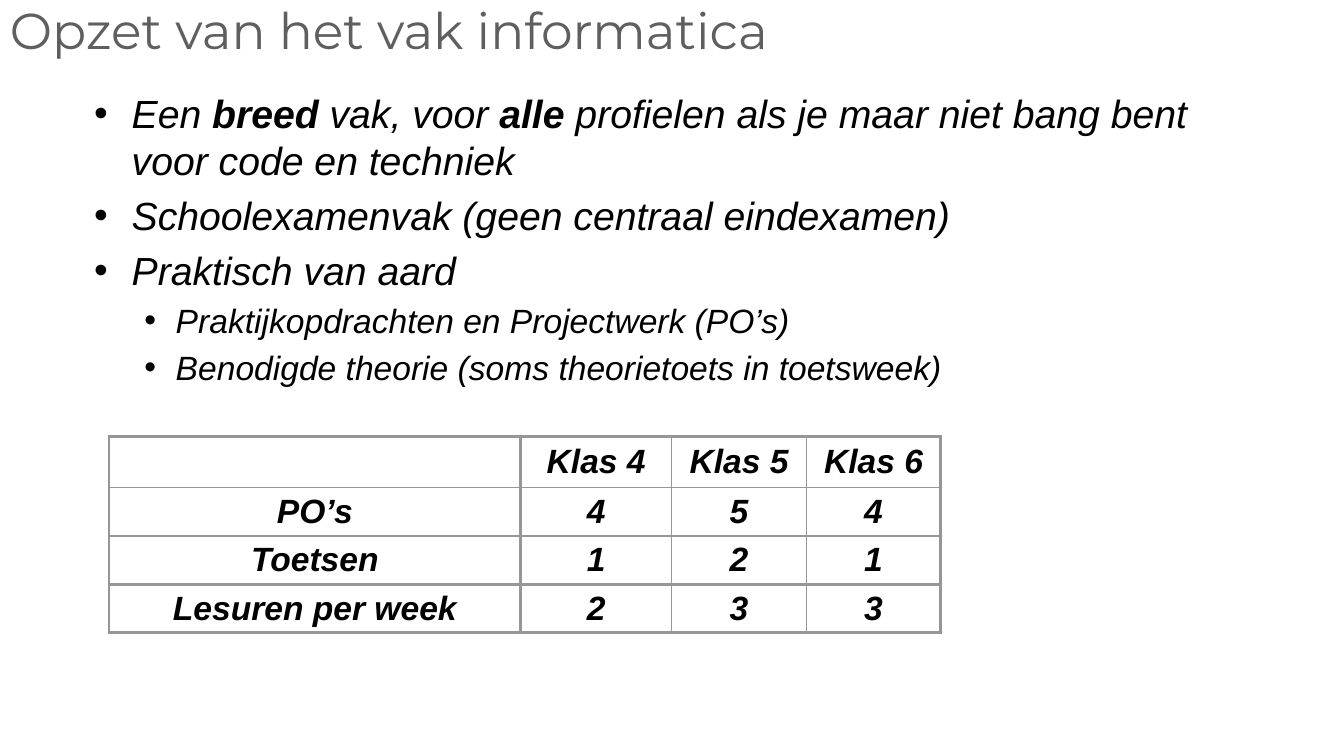
from lxml import etree
from pptx import Presentation
from pptx.dml.color import RGBColor
from pptx.enum.text import MSO_ANCHOR, PP_ALIGN
from pptx.oxml.ns import qn
from pptx.util import Cm, Pt

CENTER = PP_ALIGN.CENTER
MIDDLE = MSO_ANCHOR.MIDDLE
BLACK, TITLE_GREY, BORDER_GREY = "000000", "5F5F5F", "969696"
THIN, THICK = 1, 2.25


def add_span(para, text, size, color=BLACK, name="Arial", bold=False, italic=True):
    """Append one formatted run to a paragraph."""
    span = para.add_run()
    span.text = text
    font = span.font
    font.name, font.size, font.bold, font.italic = name, Pt(size), bold, italic
    font.color.rgb = RGBColor.from_string(color)


def set_border(cell, side, width):
    """Draw one cell border; side is L, R, T or B, width is in points."""
    properties = cell._tc.get_or_add_tcPr()
    line = etree.SubElement(properties, qn(f"a:ln{side}"), w=str(Pt(width)))
    fill = etree.SubElement(line, qn("a:solidFill"))
    etree.SubElement(fill, qn("a:srgbClr"), val=BORDER_GREY)


deck = Presentation()
deck.slide_width, deck.slide_height = Cm(33.87), Cm(19.05)
page = deck.slides.add_slide(deck.slide_layouts[6])

# Title
title_box = page.shapes.add_textbox(Cm(0), Cm(-0.2), Cm(33.87), Cm(1.9))
title_box.text_frame.word_wrap = True
title_box.text_frame.vertical_anchor = MIDDLE
add_span(title_box.text_frame.paragraphs[0], "Opzet van het vak informatica", 36,
         TITLE_GREY, "Montserrat", italic=False)

# Bullet list: level and (text, bold) spans
bullets = [
    (0, [("Een ", False), ("breed ", True), ("vak, voor ", False), ("alle ", True),
         ("profielen als je maar niet bang bent voor code en techniek", False)]),
    (0, [("Schoolexamenvak (geen centraal eindexamen)", False)]),
    (0, [("Praktisch van aard", False)]),
    (1, [("Praktijkopdrachten en Projectwerk (PO’s)", False)]),
    (1, [("Benodigde theorie (soms theorietoets in toetsweek)", False)]),
]
level_styles = [(28, Cm(0.95), Cm(-0.95)), (24, Cm(2.06), Cm(-0.79))]

body_box = page.shapes.add_textbox(Cm(2.12), Cm(2.12), Cm(29.21), Cm(15.67))
body = body_box.text_frame
body.word_wrap = True
for index, (level, spans) in enumerate(bullets):
    para = body.add_paragraph() if index else body.paragraphs[0]
    size, margin, indent = level_styles[level]
    para.level = level
    properties = para._p.get_or_add_pPr()
    properties.set("marL", str(margin))
    properties.set("indent", str(indent))
    etree.SubElement(properties, qn("a:buFont"), typeface="Arial")
    etree.SubElement(properties, qn("a:buChar"), char="•")
    if index:
        para.space_before = Pt(0.2 * size)
    for text, bold in spans:
        add_span(para, text, size, bold=bold)

# Table
rows = [
    ["", "Klas 4", "Klas 5", "Klas 6"],
    ["PO’s", "4", "5", "4"],
    ["Toetsen", "1", "2", "1"],
    ["Lesuren per week", "2", "3", "3"],
]
column_widths = [10.37, 3.81, 3.39, 3.39]
row_heights = [1.29, 1.2, 1.2, 1.2]
vertical_lines = [THICK, THICK, THIN, THIN, THICK]
horizontal_lines = [THICK, THIN, THIN, THICK, THICK]

frame = page.shapes.add_table(4, 4, Cm(2.75), Cm(11), Cm(sum(column_widths)),
                              Cm(sum(row_heights)))
table = frame.table
table.first_row = table.horz_banding = False
for column, width in zip(table.columns, column_widths):
    column.width = Cm(width)
for row, height in zip(table.rows, row_heights):
    row.height = Cm(height)

for r, row in enumerate(rows):
    for c, text in enumerate(row):
        cell = table.cell(r, c)
        cell.margin_top = cell.margin_bottom = Cm(0.1)
        cell.vertical_anchor = MIDDLE
        set_border(cell, "L", vertical_lines[c])
        set_border(cell, "R", vertical_lines[c + 1])
        set_border(cell, "T", horizontal_lines[r])
        set_border(cell, "B", horizontal_lines[r + 1])
        cell.fill.background()
        para = cell.text_frame.paragraphs[0]
        para.alignment = CENTER
        if text:
            add_span(para, text, 24, bold=True)
        else:
            para.font.size = Pt(24)

deck.save("out.pptx")
